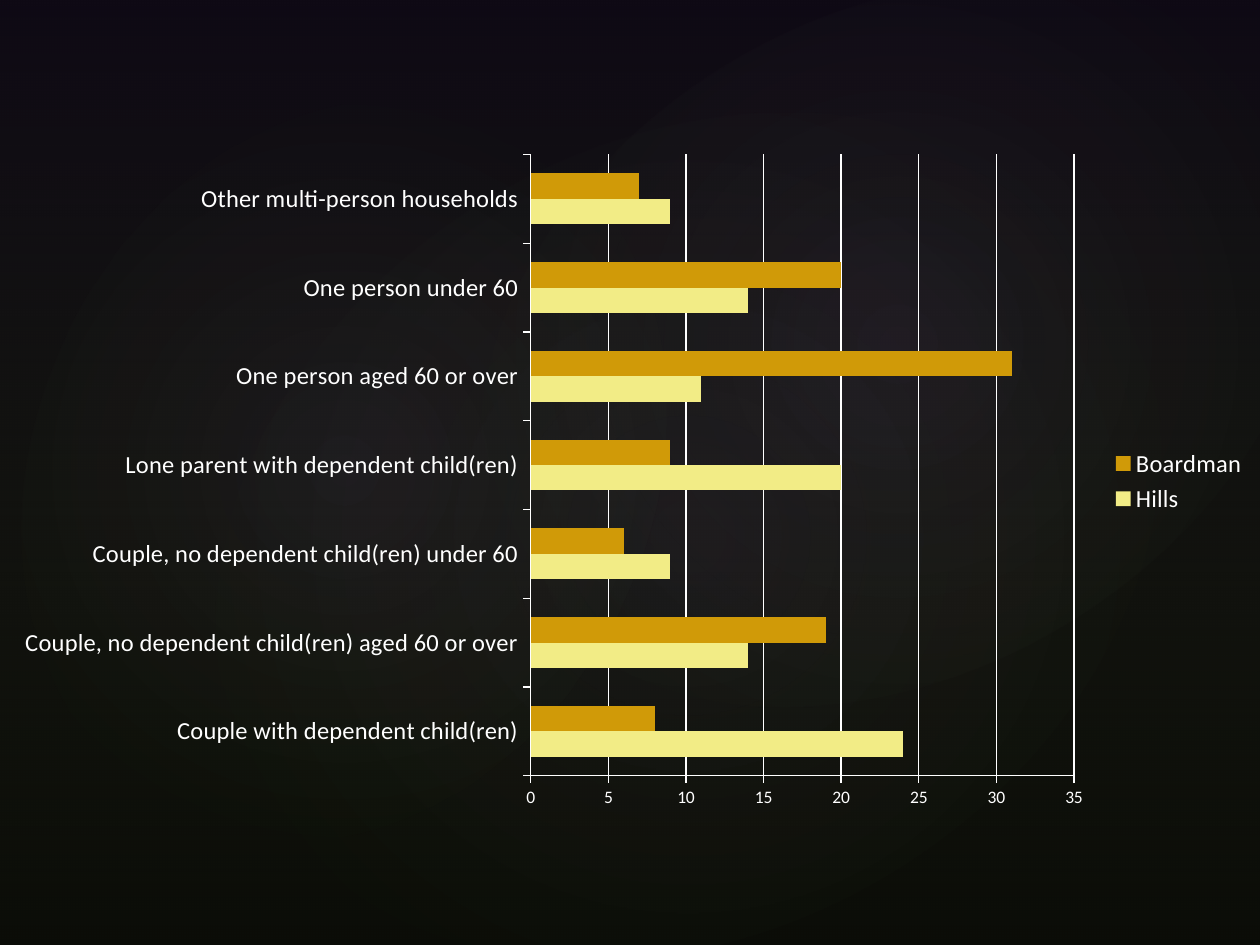
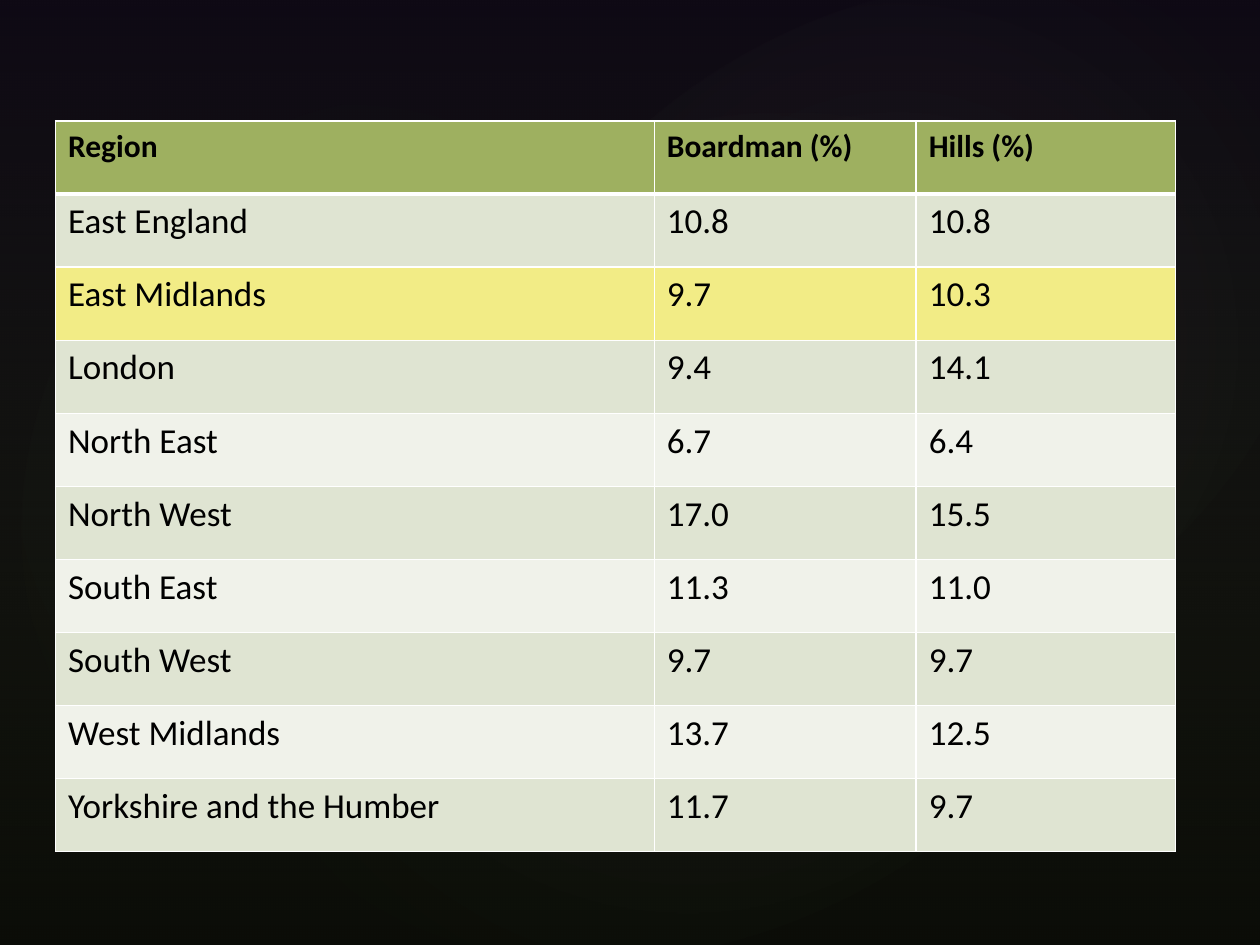
from dataclasses import dataclass
from typing import NamedTuple

from pptx import Presentation
from pptx.chart.data import CategoryChartData
from pptx.dml.color import RGBColor
from pptx.enum.chart import XL_CHART_TYPE as ChartType
from pptx.enum.chart import XL_LEGEND_POSITION as LegendPosition
from pptx.enum.chart import XL_TICK_MARK as TickMark
from pptx.enum.shapes import MSO_SHAPE as Shape
from pptx.oxml import parse_xml
from pptx.oxml.ns import nsdecls
from pptx.slide import Slide, SlideLayout
from pptx.util import Cm, Pt


@dataclass(frozen=True)
class Theme:
    font: str = "Calibri"
    background: str = "000000"
    light: str = "FFFFFF"
    ink: str = "000000"
    purple: str = "9876BE"
    deep_purple: str = "2A1C3B"
    moss: str = "738450"
    yellow: str = "F2EC86"
    amber: str = "D09A08"
    header: str = "9EB060"
    band: str = "DFE4D2"
    plain: str = "F0F2EA"
    axis_size: int = 10
    label_size: int = 14
    header_size: int = 18
    body_size: int = 20
    line_width: float = 0.75
    border_width: int = 1
    header_rule: int = 3


THEME = Theme()


class Stop(NamedTuple):
    position: int
    color: str
    opacity: int


class Glow(NamedTuple):
    left: float
    top: float
    width: float
    height: float
    rotation: float
    opacity: int


class Region(NamedTuple):
    name: str
    boardman: str
    hills: str


class Household(NamedTuple):
    name: str
    hills: int
    boardman: int


PAGE_WIDTH, PAGE_HEIGHT = 25.4, 19.05

GLOWS = [
    Glow(3.81, 2.9, 20.12, 15.85, 328.7, 7),
    Glow(-0.76, 3.25, 15.39, 12.45, 294.3, 8),
    Glow(9.09, 0.33, 18.01, 13.21, 328.7, 8),
]

HOUSEHOLDS = [
    Household("Couple with dependent child(ren)", 24, 8),
    Household("Couple, no dependent child(ren) aged 60 or over", 14, 19),
    Household("Couple, no dependent child(ren) under 60", 9, 6),
    Household("Lone parent with dependent child(ren)", 20, 9),
    Household("One person aged 60 or over", 11, 31),
    Household("One person under 60", 14, 20),
    Household("Other multi-person households", 9, 7),
]

REGION_HEADER = Region("Region", "Boardman (%)", "Hills (%)")
REGIONS = [
    Region("East England", "10.8", "10.8"),
    Region("East Midlands", "9.7", "10.3"),
    Region("London", "9.4", "14.1"),
    Region("North East", "6.7", "6.4"),
    Region("North West", "17.0", "15.5"),
    Region("South East", "11.3", "11.0"),
    Region("South West", "9.7", "9.7"),
    Region("West Midlands", "13.7", "12.5"),
    Region("Yorkshire and the Humber", "11.7", "9.7"),
]
HIGHLIGHTED_REGION = "East Midlands"
COLUMN_WIDTHS = [12.07, 5.28, 5.23]


def rgb(color: str) -> RGBColor:
    return RGBColor.from_string(color)


def set_gradient(shape, stops: list[Stop], direction: str) -> None:
    """Fill a shape with translucent stops along the given direction XML."""
    stop_xml = "".join(
        f'<a:gs pos="{stop.position * 1000}"><a:srgbClr val="{stop.color}">'
        f'<a:alpha val="{stop.opacity * 1000}"/></a:srgbClr></a:gs>'
        for stop in stops
    )
    shape.fill.background()
    properties = shape.element.spPr
    empty_fill = properties.find("{*}noFill")
    properties.replace(empty_fill, parse_xml(
        f'<a:gradFill {nsdecls("a")} rotWithShape="1">'
        f"<a:gsLst>{stop_xml}</a:gsLst>{direction}</a:gradFill>"
    ))


def add_backdrop(layout: SlideLayout, page: Slide) -> None:
    """Draw the shared backdrop on a page and move it to the layout."""
    for holder in list(layout.placeholders):
        holder.element.getparent().remove(holder.element)

    veil = page.shapes.add_shape(Shape.RECTANGLE, 0, 0, Cm(PAGE_WIDTH), Cm(PAGE_HEIGHT))
    set_gradient(
        veil,
        [Stop(0, THEME.deep_purple, 36), Stop(100, THEME.moss, 10)],
        '<a:lin ang="5400000" scaled="0"/>',
    )
    backdrop = [veil]
    for glow in GLOWS:
        ellipse = page.shapes.add_shape(
            Shape.OVAL, Cm(glow.left), Cm(glow.top), Cm(glow.width), Cm(glow.height)
        )
        ellipse.rotation = glow.rotation
        set_gradient(
            ellipse,
            [Stop(0, THEME.purple, glow.opacity), Stop(58, THEME.moss, 0)],
            '<a:path path="circle"><a:fillToRect l="50000" t="50000" r="50000" b="50000"/></a:path>',
        )
        backdrop.append(ellipse)

    for shape in backdrop:
        shape.line.fill.background()
        shape.shadow.inherit = False
        layout.shapes.element.append(shape.element)


def style_font(font, size: int, color: str, bold: bool = False) -> None:
    font.name = THEME.font
    font.size = Pt(size)
    font.bold = bold
    font.color.rgb = rgb(color)


def style_line(line) -> None:
    line.color.rgb = rgb(THEME.light)
    line.width = Pt(THEME.line_width)


def add_household_chart(page: Slide) -> None:
    data = CategoryChartData()
    data.categories = [household.name for household in HOUSEHOLDS]
    data.add_series("Hills", [household.hills for household in HOUSEHOLDS])
    data.add_series("Boardman", [household.boardman for household in HOUSEHOLDS])
    chart = page.shapes.add_chart(
        ChartType.BAR_CLUSTERED, 0, Cm(2.84), Cm(PAGE_WIDTH), Cm(13.72), data
    ).chart
    chart.has_title = False
    style_font(chart.font, THEME.axis_size, THEME.light)

    plot = chart.plots[0]
    plot.gap_width = 150
    plot.overlap = 0
    plot.vary_by_categories = False
    for series, color in zip(plot.series, [THEME.yellow, THEME.amber]):
        series.format.fill.solid()
        series.format.fill.fore_color.rgb = rgb(color)
        series.invert_if_negative = False

    axes = [(chart.category_axis, THEME.label_size), (chart.value_axis, THEME.axis_size)]
    for axis, size in axes:
        axis.major_tick_mark = TickMark.OUTSIDE
        axis.minor_tick_mark = TickMark.NONE
        style_line(axis.format.line)
        style_font(axis.tick_labels.font, size, THEME.light)
    chart.value_axis.minimum_scale = 0
    chart.value_axis.maximum_scale = 35
    chart.value_axis.major_unit = 5
    chart.value_axis.has_major_gridlines = True
    style_line(chart.value_axis.major_gridlines.format.line)

    chart.has_legend = True
    chart.legend.position = LegendPosition.RIGHT
    chart.legend.include_in_layout = False
    style_font(chart.legend.font, THEME.label_size, THEME.light)


def set_borders(cell, top: int, bottom: int) -> None:
    properties = cell._tc.get_or_add_tcPr()
    widths = {"L": THEME.border_width, "R": THEME.border_width, "T": top, "B": bottom}
    for index, (side, width) in enumerate(widths.items()):
        properties.insert(index, parse_xml(
            f'<a:ln{side} {nsdecls("a")} w="{Pt(width)}"><a:solidFill>'
            f'<a:srgbClr val="{THEME.light}"/></a:solidFill></a:ln{side}>'
        ))


def row_color(row: int, name: str) -> str:
    if row == 0:
        return THEME.header
    if name == HIGHLIGHTED_REGION:
        return THEME.yellow
    return THEME.band if row % 2 else THEME.plain


def add_region_table(page: Slide) -> None:
    rows = [REGION_HEADER, *REGIONS]
    table = page.shapes.add_table(
        len(rows), len(COLUMN_WIDTHS), Cm(1.12), Cm(2.44), Cm(sum(COLUMN_WIDTHS)), Cm(14.73)
    ).table
    for column, width in zip(table.columns, COLUMN_WIDTHS):
        column.width = Cm(width)

    for row, region in enumerate(rows):
        is_header = row == 0
        size = THEME.header_size if is_header else THEME.body_size
        top = THEME.header_rule if row == 1 else THEME.border_width
        bottom = THEME.header_rule if is_header else THEME.border_width
        for column, text in enumerate(region):
            cell = table.cell(row, column)
            cell.text_frame.text = text
            style_font(cell.text_frame.paragraphs[0].runs[0].font, size, THEME.ink, is_header)
            cell.fill.solid()
            cell.fill.fore_color.rgb = rgb(row_color(row, region.name))
            set_borders(cell, top, bottom)


def main() -> None:
    deck = Presentation()
    deck.slide_width, deck.slide_height = Cm(PAGE_WIDTH), Cm(PAGE_HEIGHT)
    background = deck.slide_master.background.fill
    background.solid()
    background.fore_color.rgb = rgb(THEME.background)

    blank = deck.slide_layouts.get_by_name("Blank")
    chart_page = deck.slides.add_slide(blank)
    add_backdrop(blank, chart_page)
    add_household_chart(chart_page)
    add_region_table(deck.slides.add_slide(blank))
    deck.save("out.pptx")


if __name__ == "__main__":
    main()
